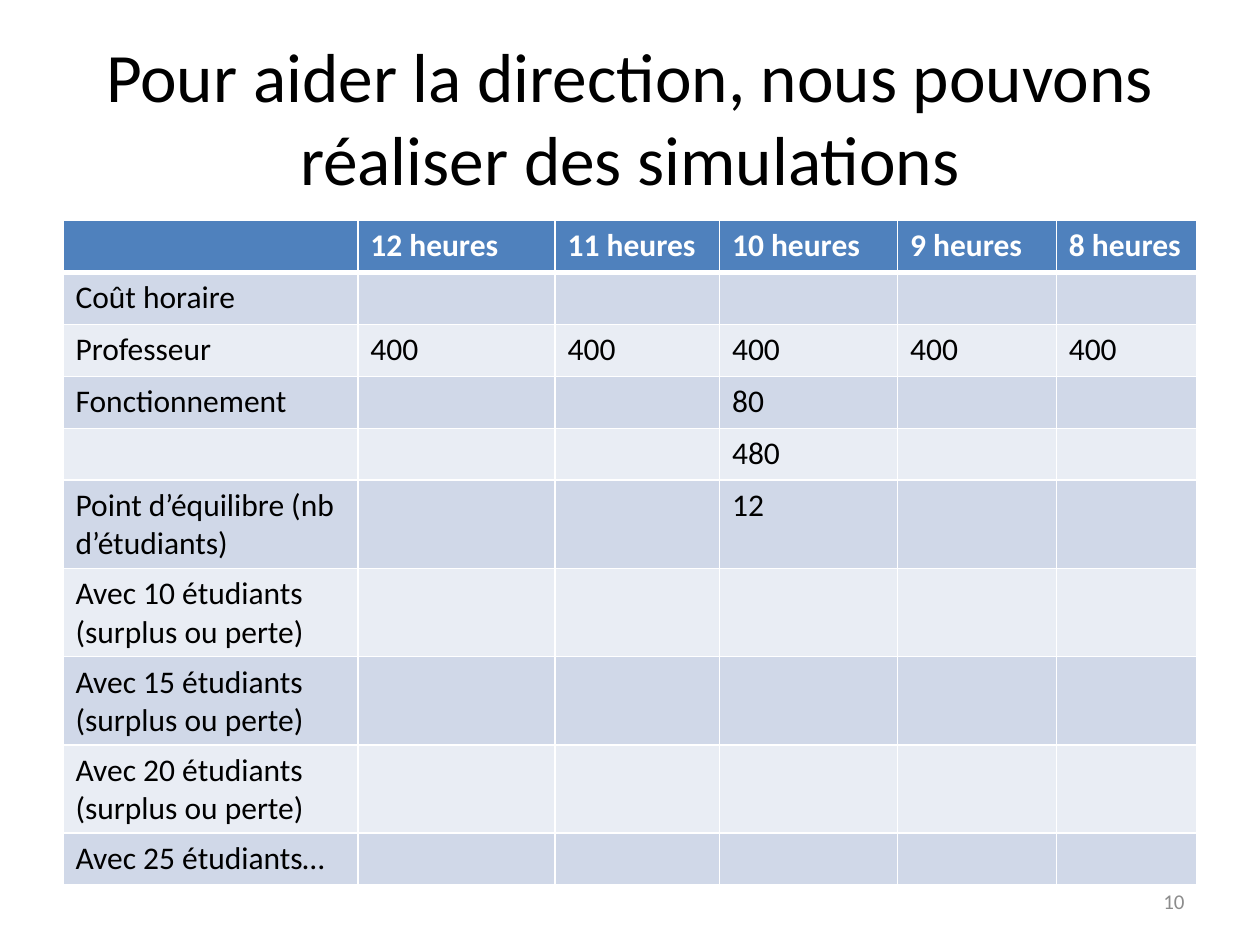
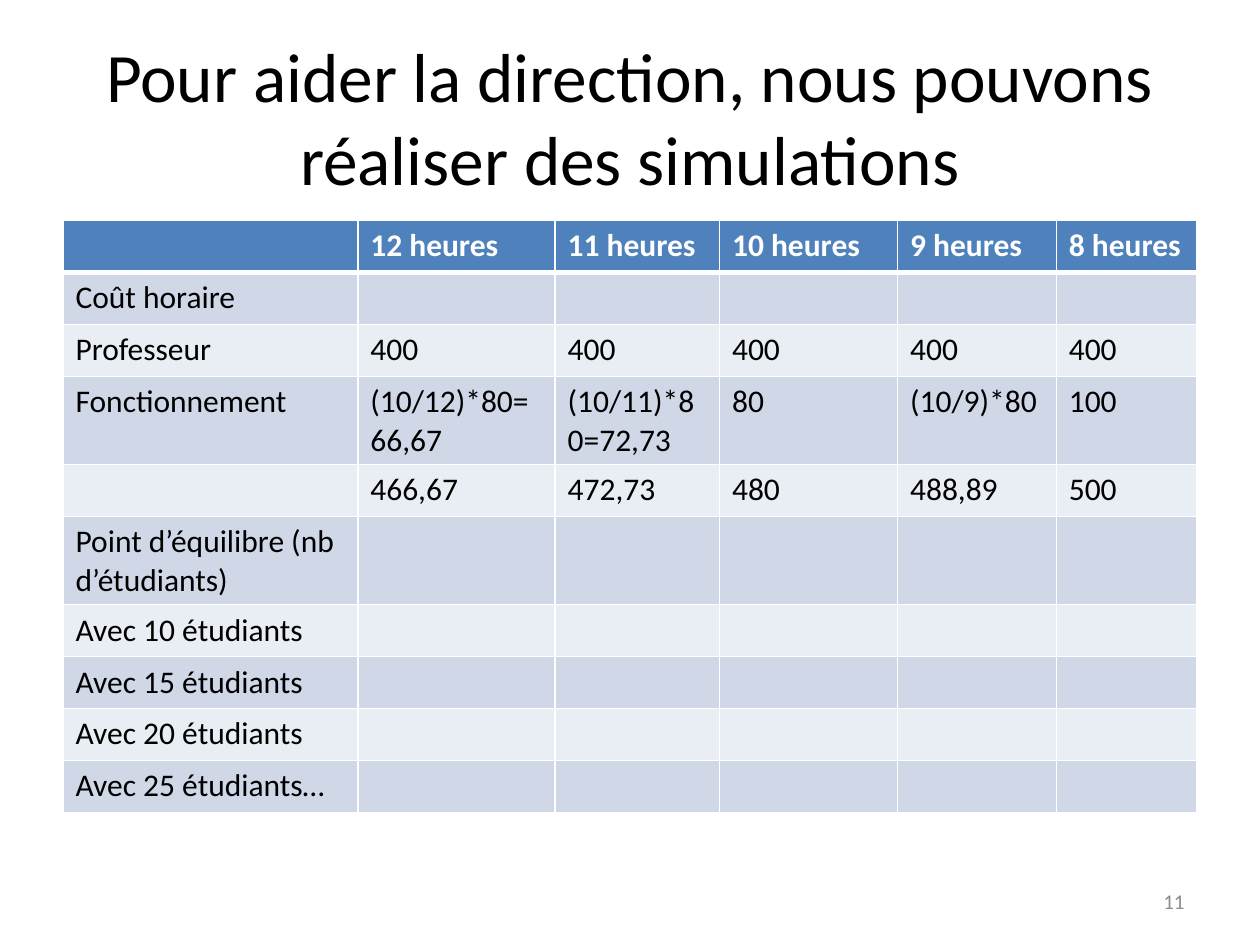
from itertools import chain

from lxml import etree
from pptx import Presentation
from pptx import util as u
from pptx.dml.color import RGBColor
from pptx.enum import text
from pptx.oxml.ns import qn

SLIDE_WIDTH, SLIDE_HEIGHT = u.Inches(10), u.Inches(7.5)
FONT = "Calibri"
WHITE, BLACK, GREY = "FFFFFF", "000000", "8C8C8C"
HEADER_FILL = "4F81BD"
BAND_FILLS = ("E9EDF4", "D0D8E8")

TITLE_BOX = (0.05, 0.04, 0.9, 1 / 6)
TABLE_BOX = (0.05, 7 / 30, 0.9, 0.55)
NUMBER_BOX = (0.717, 0.927, 0.233, 0.053)
COLUMN_SHARES = (0.26, 0.174, 0.145, 0.157, 0.14, 0.124)

TITLE_FORMAT = {"size": u.Pt(39.6), "name": FONT, "color": BLACK}
NUMBER_FORMAT = {"size": u.Pt(12), "name": FONT, "color": GREY}
HEADER_FORMAT = {"size": u.Pt(18), "name": FONT, "bold": True, "color": WHITE}
BODY_FORMAT = {**HEADER_FORMAT, "bold": False, "color": BLACK}

TITLE = "Pour aider la direction, nous pouvons réaliser des simulations"
EMPTY = [""] * 5
HEADER = ["", *(f"{hours} heures" for hours in range(12, 7, -1))]
SHARED_ROWS = [HEADER, ["Coût horaire", *EMPTY], ["Professeur", *["400"] * 5]]
BREAK_EVEN = "Point d’équilibre (nb d’étudiants)"


def student_rows(suffix):
    labels = [f"Avec {count} étudiants{suffix}" for count in (10, 15, 20)]
    return [[label, *EMPTY] for label in [*labels, "Avec 25 étudiants…"]]


SIMULATIONS = {
    10: [
        *SHARED_ROWS,
        ["Fonctionnement", "", "", "80", "", ""],
        ["", "", "", "480", "", ""],
        [BREAK_EVEN, "", "", "12", "", ""],
        *student_rows(" (surplus ou perte)"),
    ],
    11: [
        *SHARED_ROWS,
        ["Fonctionnement", "(10/12)*80=66,67", "(10/11)*80=72,73", "80", "(10/9)*80", "100"],
        ["", "466,67", "472,73", "480", "488,89", "500"],
        [BREAK_EVEN, *EMPTY],
        *student_rows(""),
    ],
}


def color(value):
    return RGBColor.from_string(value)


def place(box):
    sizes = (SLIDE_WIDTH, SLIDE_HEIGHT) * 2
    return [u.Emu(round(share * size)) for share, size in zip(box, sizes)]


def write(paragraph, content, formats):
    run = paragraph.add_run()
    run.text = content
    for name, value in formats.items():
        if name == "color":
            run.font.color.rgb = color(value)
        else:
            setattr(run.font, name, value)


def add_label(slide, box, content, formats, alignment):
    shape = slide.shapes.add_textbox(*place(box))
    frame = shape.text_frame
    frame.word_wrap = True
    frame.vertical_anchor = text.MSO_ANCHOR.MIDDLE
    paragraph = frame.paragraphs[0]
    paragraph.alignment = alignment
    write(paragraph, content, formats)


def add_borders(cell, widths):
    properties = cell._tc.get_or_add_tcPr()
    for index, (side, width) in enumerate(widths.items()):
        line = etree.Element(qn(f"a:ln{side}"), w=str(u.Pt(width)))
        fill = etree.SubElement(line, qn("a:solidFill"))
        etree.SubElement(fill, qn("a:srgbClr"), val=WHITE)
        properties.insert(index, line)


def format_cell(cell, content, row):
    is_header = row == 0
    cell.fill.solid()
    cell.fill.fore_color.rgb = color(HEADER_FILL if is_header else BAND_FILLS[row % 2])
    add_borders(cell, {"L": 1, "R": 1, "T": 3 if row == 1 else 1, "B": 3 if is_header else 1})
    if content:
        write(cell.text_frame.paragraphs[0], content, HEADER_FORMAT if is_header else BODY_FORMAT)


def add_simulation_table(slide, box, rows):
    left, top, width, height = place(box)
    frame = slide.shapes.add_table(len(rows), len(COLUMN_SHARES), left, top, width, height)
    table = frame.table
    table.horz_banding = False
    for column, share in zip(table.columns, COLUMN_SHARES):
        column.width = u.Emu(round(width * share))
    for index, (cell, content) in enumerate(zip(table.iter_cells(), chain(*rows))):
        format_cell(cell, content, index // len(COLUMN_SHARES))


def add_simulation_slide(presentation, number, rows):
    slide = presentation.slides.add_slide(presentation.slide_layouts[6])
    add_label(slide, TITLE_BOX, TITLE, TITLE_FORMAT, text.PP_ALIGN.CENTER)
    add_simulation_table(slide, TABLE_BOX, rows)
    add_label(slide, NUMBER_BOX, str(number), NUMBER_FORMAT, text.PP_ALIGN.RIGHT)


def main():
    presentation = Presentation()
    presentation.slide_width, presentation.slide_height = SLIDE_WIDTH, SLIDE_HEIGHT
    for number, rows in SIMULATIONS.items():
        add_simulation_slide(presentation, number, rows)
    presentation.save("out.pptx")


if __name__ == "__main__":
    main()
